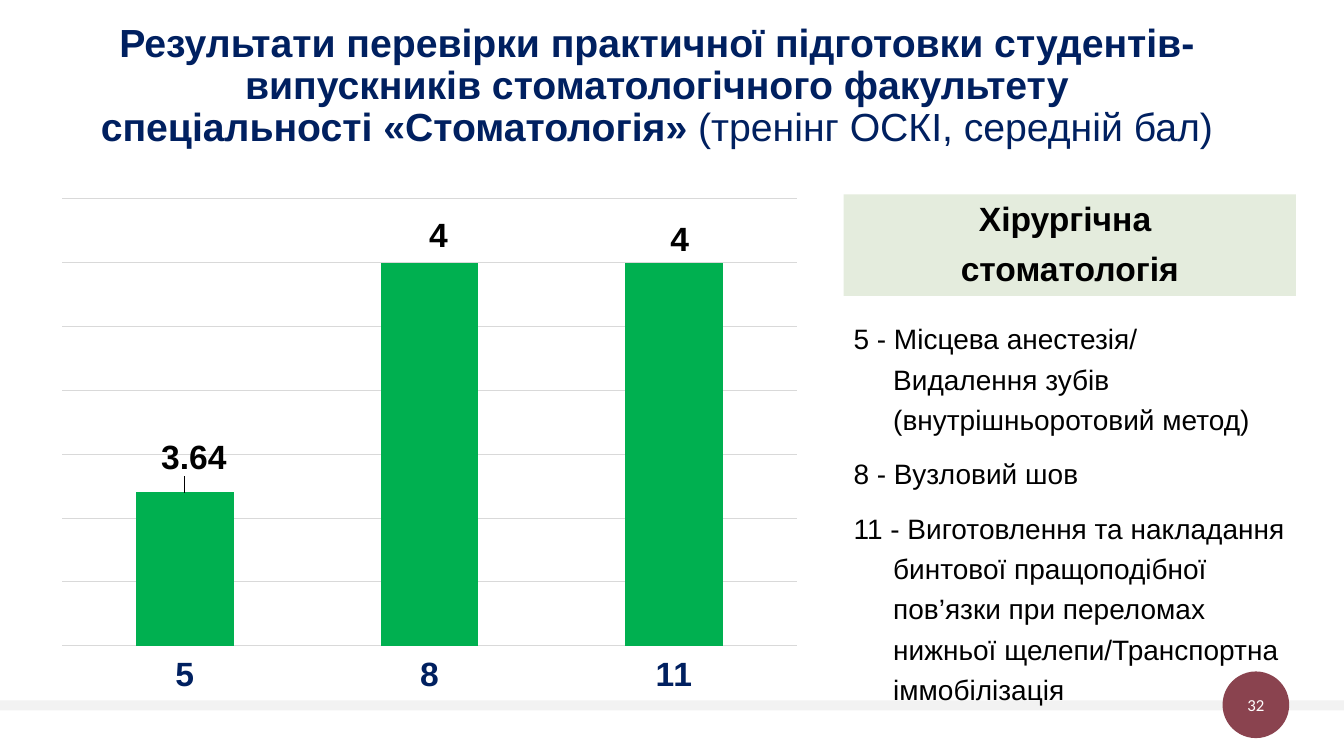
from dataclasses import dataclass

from lxml import etree
from pptx import Presentation
from pptx.chart.data import CategoryChartData
from pptx.dml.color import RGBColor
from pptx.enum import chart as charts, shapes, text
from pptx.oxml import ns
from pptx.util import Cm, Pt

# Content
TITLE_LINES = [
    [("Результати перевірки практичної підготовки студентів-випускників "
      "стоматологічного факультету", True)],
    [("спеціальності «Стоматологія» ", True), ("(тренінг ОСКІ, середній бал)", False)],
]
SUBJECT = ["Хірургічна ", "стоматологія"]
STATIONS = [
    "5 - Місцева анестезія/\nВидалення зубів (внутрішньоротовий метод)",
    "8 - Вузловий шов",
    "11 - Виготовлення та накладання бинтової пращоподібної пов’язки "
    "при переломах нижньої щелепи/Транспортна іммобілізація",
]
SCORES = {"5": 3.64, "8": 4, "11": 4}
LABEL_SHIFTS = [(0.012, -0.023), (0.012, -0.008), (0.007, 0)]
PLOT_AREA = {"x": 0.02, "y": 0.02, "w": 0.97, "h": 0.87}
PAGE_NUMBER = "32"


@dataclass(frozen=True)
class Theme:
    font: str = "Arial"
    number_font: str = "Calibri"
    navy: str = "002060"
    black: str = "000000"
    white: str = "FFFFFF"
    green: str = "00B050"
    pale_green: str = "E4ECDD"
    maroon: str = "8A434F"
    band: str = "F2F2F2"
    grid: str = "D9D9D9"
    title_size: int = 28
    heading_size: int = 24
    body_size: int = 20
    number_size: int = 12


THEME = Theme()

# Layout in centimetres
SLIDE_WIDTH, SLIDE_HEIGHT = 33.87, 19.05
PANEL_LEFT, PANEL_WIDTH = 21.26, 11.4
BADGE = 1.68


def style_font(font, size, color, bold=False, name=THEME.font):
    font.name, font.size, font.bold = name, Pt(size), bold
    font.color.rgb = RGBColor.from_string(color)


def add_block(slide, kind, left, top, width, height, color):
    shape = slide.shapes.add_shape(kind, Cm(left), Cm(top), Cm(width), Cm(height))
    shape.shadow.inherit = False
    shape.fill.solid()
    shape.fill.fore_color.rgb = RGBColor.from_string(color)
    shape.line.fill.background()
    shape.text_frame.vertical_anchor = text.MSO_ANCHOR.MIDDLE
    return shape


def add_text_frame(slide, left, top, width, height):
    frame = slide.shapes.add_textbox(Cm(left), Cm(top), Cm(width), Cm(height)).text_frame
    frame.word_wrap = True
    return frame


def add_paragraphs(frame, lines):
    for index, line in enumerate(lines):
        paragraph = frame.add_paragraph() if index else frame.paragraphs[0]
        paragraph.text = line
        paragraph.space_before = Pt(10)
        yield paragraph


def set_layout(parent, position, values, inner=False):
    """Place a chart part by hand, as fractions of the chart."""
    for old in parent.findall(ns.qn("c:layout")):
        parent.remove(old)
    layout = etree.Element(ns.qn("c:layout"))
    manual = etree.SubElement(layout, ns.qn("c:manualLayout"))
    if inner:
        etree.SubElement(manual, ns.qn("c:layoutTarget"), val="inner")
        for axis in "xy":
            etree.SubElement(manual, ns.qn(f"c:{axis}Mode"), val="edge")
    for name, value in values.items():
        etree.SubElement(manual, ns.qn(f"c:{name}"), val=str(value))
    parent.insert(position, layout)


def add_footer(slide):
    add_block(slide, shapes.MSO_SHAPE.RECTANGLE, 0, 17.65, SLIDE_WIDTH, 0.25, THEME.band)
    badge = add_block(slide, shapes.MSO_SHAPE.OVAL, 30.81, 16.92, BADGE, BADGE, THEME.maroon)
    frame = badge.text_frame
    frame.margin_left = frame.margin_right = frame.margin_top = frame.margin_bottom = 0
    paragraph = frame.paragraphs[0]
    paragraph.text = PAGE_NUMBER
    paragraph.alignment = text.PP_ALIGN.CENTER
    style_font(paragraph.font, THEME.number_size, THEME.white, name=THEME.number_font)


def add_title(slide):
    frame = add_text_frame(slide, 1.3, 0.46, 30.76, 3.61)
    frame.margin_left = 0
    paragraph = frame.paragraphs[0]
    paragraph.alignment = text.PP_ALIGN.CENTER
    paragraph.line_spacing = 0.9
    for index, line in enumerate(TITLE_LINES):
        if index:
            paragraph.add_line_break()
        for words, bold in line:
            run = paragraph.add_run()
            run.text = words
            style_font(run.font, THEME.title_size, THEME.navy, bold)


def add_panel(slide):
    frame = add_text_frame(slide, PANEL_LEFT, 7.82, PANEL_WIDTH, 9.14)
    for paragraph in add_paragraphs(frame, STATIONS):
        paragraph.line_spacing = 1.2
        style_font(paragraph.font, THEME.body_size, THEME.black)
        properties = paragraph._p.get_or_add_pPr()
        properties.set("marL", str(Cm(1)))
        properties.set("indent", str(Cm(-1)))

    heading = add_block(slide, shapes.MSO_SHAPE.RECTANGLE, PANEL_LEFT, 4.9,
                        PANEL_WIDTH, 2.56, THEME.pale_green)
    for paragraph in add_paragraphs(heading.text_frame, SUBJECT):
        paragraph.alignment = text.PP_ALIGN.CENTER
        paragraph.line_spacing = 0.9
        style_font(paragraph.font, THEME.heading_size, THEME.black, True)


def add_score_chart(slide):
    data = CategoryChartData()
    data.categories = list(SCORES)
    data.add_series("Середній бал", list(SCORES.values()))
    chart = slide.shapes.add_chart(charts.XL_CHART_TYPE.COLUMN_CLUSTERED, Cm(1.19), Cm(4.75),
                                   Cm(19.08), Cm(12.95), data).chart
    chart.has_legend = chart.has_title = False
    style_font(chart.font, 10, THEME.black)
    set_layout(chart._chartSpace.chart.plotArea, 0, PLOT_AREA, inner=True)

    # Axes
    values, categories = chart.value_axis, chart.category_axis
    values.minimum_scale, values.maximum_scale, values.major_unit = 3.4, 4.1, 0.1
    values.visible = False
    categories.major_tick_mark = charts.XL_TICK_MARK.NONE
    categories.tick_label_position = charts.XL_TICK_LABEL_POSITION.LOW
    style_font(categories.tick_labels.font, THEME.heading_size, THEME.navy, True)
    for line in (values.major_gridlines.format.line, categories.format.line):
        line.color.rgb = RGBColor.from_string(THEME.grid)
        line.width = Pt(0.75)

    # Columns and their labels
    plot = chart.plots[0]
    plot.gap_width, plot.vary_by_categories = 150, False
    series = plot.series[0]
    series.format.fill.solid()
    series.format.fill.fore_color.rgb = RGBColor.from_string(THEME.green)
    labels = series.data_labels
    labels.show_value = True
    labels.position = charts.XL_LABEL_POSITION.OUTSIDE_END
    style_font(labels.font, THEME.heading_size, THEME.black, True)
    for index, (x, y) in enumerate(LABEL_SHIFTS):
        label = series.points[index].data_label
        label.position = charts.XL_LABEL_POSITION.OUTSIDE_END
        style_font(label.font, THEME.heading_size, THEME.black, True)
        set_layout(labels._element.findall(ns.qn("c:dLbl"))[index], 1, {"x": x, "y": y})


def main():
    presentation = Presentation()
    presentation.slide_width, presentation.slide_height = Cm(SLIDE_WIDTH), Cm(SLIDE_HEIGHT)
    slide = presentation.slides.add_slide(presentation.slide_layouts[6])
    add_footer(slide)
    add_title(slide)
    add_panel(slide)
    add_score_chart(slide)
    presentation.save("out.pptx")


if __name__ == "__main__":
    main()
